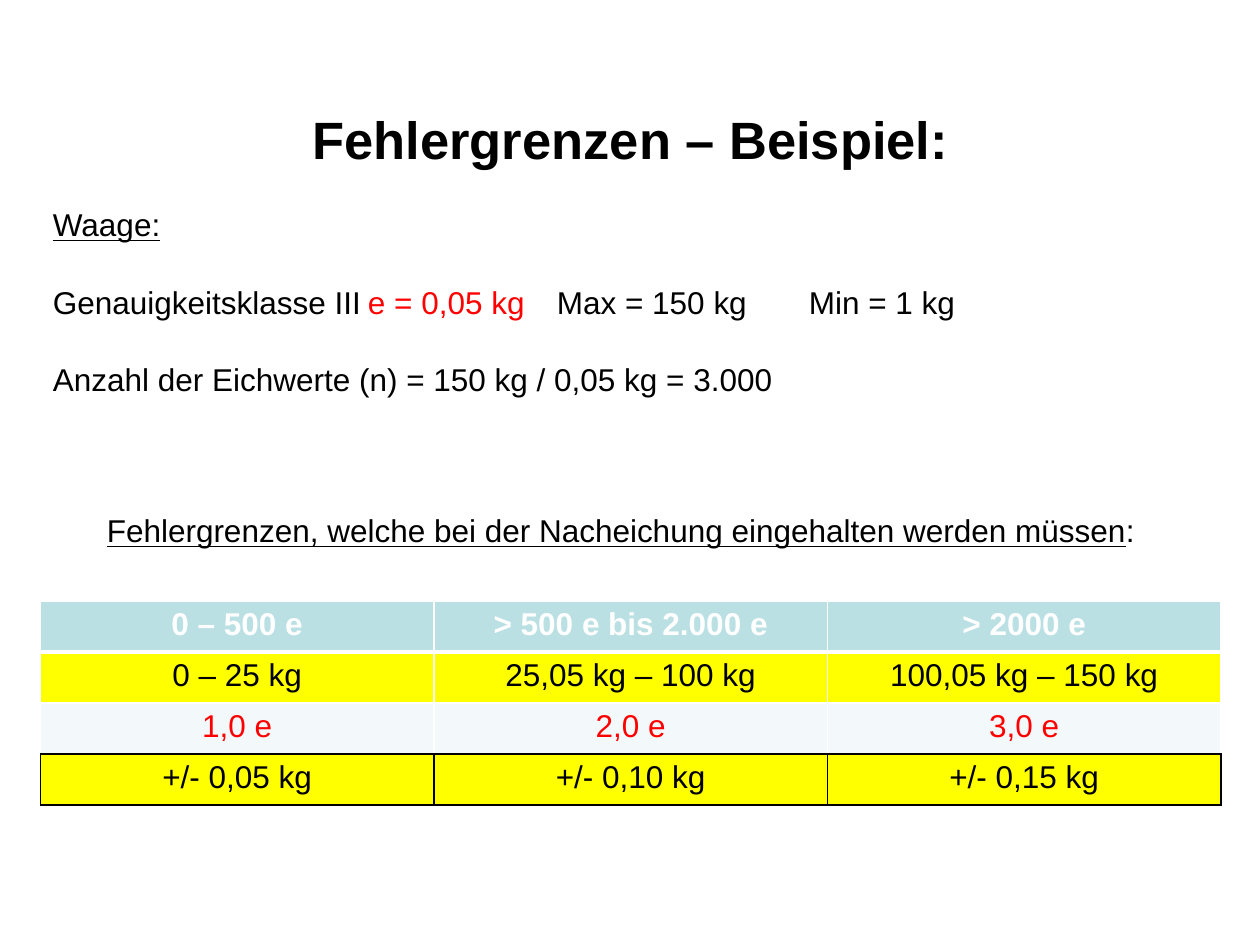
"""Builds a slide with a worked example of error limits for a scale."""
import pptx
import pptx.dml.color
import pptx.enum.text
import pptx.oxml.ns
import pptx.util
from lxml import etree

Inches = pptx.util.Inches
Pt = pptx.util.Pt
ALIGN = pptx.enum.text.PP_ALIGN
COLORS = {"black": "000000", "white": "FFFFFF", "red": "FF0000",
          "yellow": "FFFF00", "teal": "BBE0E3", "pale": "F3F9FA"}


def add_text(paragraph, text, size=18, color="black", bold=False,
             underline=False, align=ALIGN.LEFT):
    """Append a formatted run to a paragraph."""
    paragraph.alignment = align
    run = paragraph.add_run()
    run.text = text
    font = run.font
    font.name, font.size = "Arial", Pt(size)
    font.bold, font.underline = bold, underline
    font.color.rgb = pptx.dml.color.RGBColor.from_string(COLORS[color])


def add_xml(parent, tag, **attributes):
    """Append a DrawingML element to a parent."""
    values = {key: str(value) for key, value in attributes.items()}
    return etree.SubElement(parent, pptx.oxml.ns.qn(tag), values)


deck = pptx.Presentation()
deck.slide_width, deck.slide_height = Inches(10), Inches(7.5)
slide = deck.slides.add_slide(deck.slide_layouts[1])

heading, scale_data = slide.placeholders
limits_caption = slide.shapes.add_textbox(0, 0, 0, 0)
places = [(heading, 0.32, 0.8, 9.37, 0.65),
          (scale_data, 0.32, 1.58, 9.37, 1.91),
          (limits_caption, 0.75, 4.01, 8.5, 0.4)]
for block, left, top, width, height in places:
    block.left, block.top = Inches(left), Inches(top)
    block.width, block.height = Inches(width), Inches(height)
    block.text_frame.word_wrap = True
    block.text_frame.auto_size = pptx.enum.text.MSO_AUTO_SIZE.NONE
    block.text_frame.vertical_anchor = pptx.enum.text.MSO_ANCHOR.TOP

add_text(heading.text_frame.paragraphs[0], "Fehlergrenzen – Beispiel:",
         size=30, bold=True, align=ALIGN.CENTER)

scale_lines = [
    [("Waage:", {"underline": True})],
    [("Genauigkeitsklasse III\t", {}), ("e = 0,05 kg\t", {"color": "red"}),
     ("Max = 150 kg\tMin = 1 kg", {})],
    [("Anzahl der Eichwerte (n) = 150 kg / 0,05 kg = 3.000", {})],
]
for index, pieces in enumerate(scale_lines):
    frame = scale_data.text_frame
    line = frame.add_paragraph() if index else frame.paragraphs[0]
    line.space_before = Pt(22.7 if index else 0)
    for text, style in pieces:
        add_text(line, text, **style)
    properties = line._p.get_or_add_pPr()
    properties.set("marL", "0")
    properties.set("indent", "0")
    add_xml(properties, "a:buNone")
    tab_stops = add_xml(properties, "a:tabLst")
    for position in (2.87, 4.45, 6.24):
        add_xml(tab_stops, "a:tab", pos=Inches(position), algn="l")

caption_line = limits_caption.text_frame.paragraphs[0]
add_text(caption_line,
         "Fehlergrenzen, welche bei der Nacheichung eingehalten werden müssen",
         underline=True)
add_text(caption_line, ":")

limit_rows = [
    (["0 – 500 e", "> 500 e bis 2.000 e", "> 2000 e"],
     "teal", "white", "white", "white", 3),
    (["0 – 25 kg", "25,05 kg – 100 kg", "100,05 kg – 150 kg"],
     "yellow", "black", "white", "white", 1),
    (["1,0 e", "2,0 e", "3,0 e"], "pale", "red", "white", "black", 1),
    (["+/- 0,05 kg", "+/- 0,10 kg", "+/- 0,15 kg"],
     "yellow", "black", "black", "black", 1),
]
limits = slide.shapes.add_table(len(limit_rows), 3, Inches(0.32), Inches(4.77),
                                Inches(9.37), Inches(1.62)).table
top_width = 1
for index, (texts, fill, ink, edge, bottom, bottom_width) in enumerate(limit_rows):
    top_color = limit_rows[index - 1][4] if index else edge
    borders = [("a:lnL", edge, 1), ("a:lnR", edge, 1),
               ("a:lnT", top_color, top_width),
               ("a:lnB", bottom, bottom_width)]
    for cell, text in zip(limits.rows[index].cells, texts):
        for tag, color, width in borders:
            border = add_xml(cell._tc.get_or_add_tcPr(), tag, w=Pt(width))
            add_xml(add_xml(border, "a:solidFill"), "a:srgbClr", val=COLORS[color])
        cell.fill.solid()
        cell.fill.fore_color.rgb = pptx.dml.color.RGBColor.from_string(COLORS[fill])
        add_text(cell.text_frame.paragraphs[0], text, color=ink,
                 bold=index == 0, align=ALIGN.CENTER)
    top_width = bottom_width

deck.save("out.pptx")
